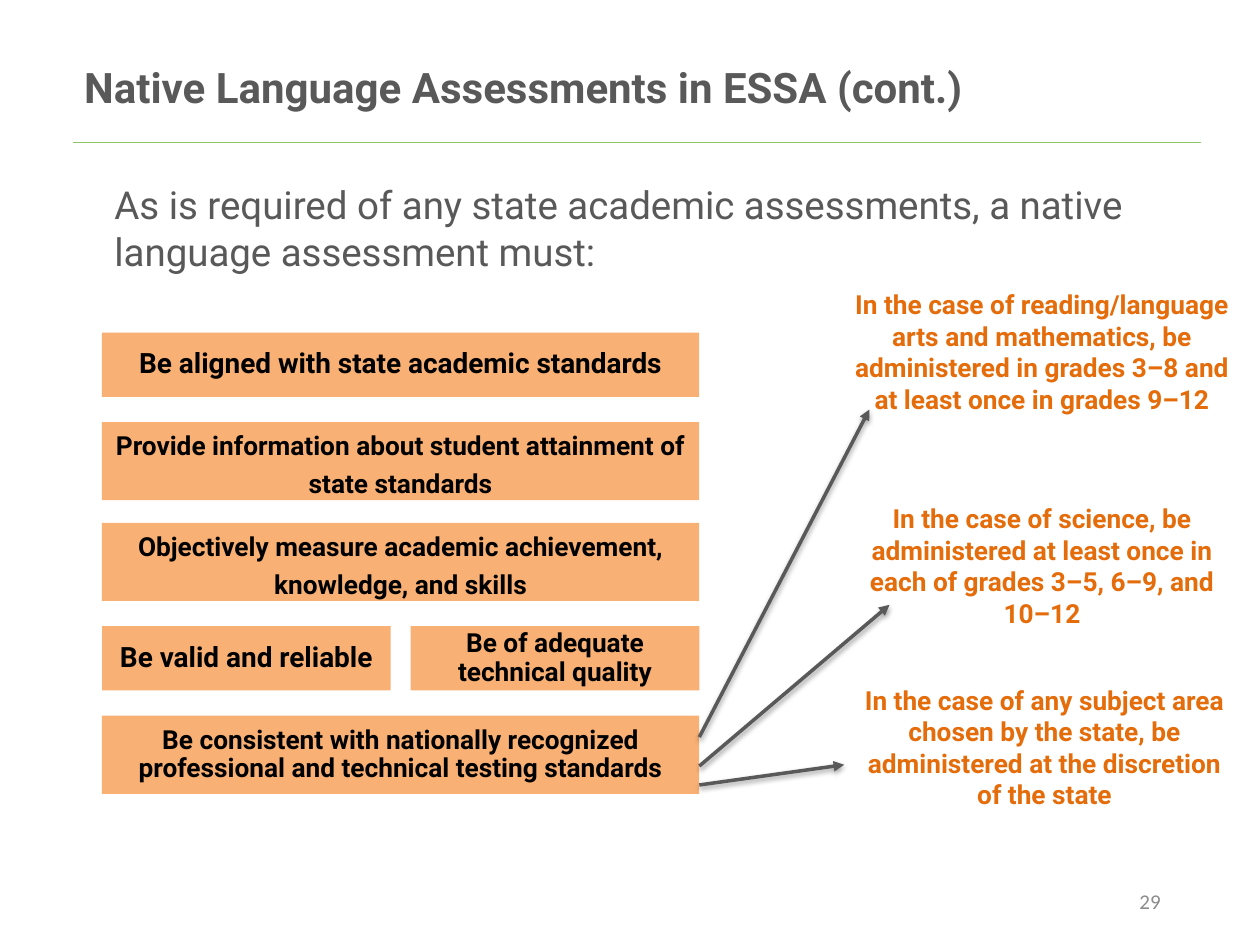
import pptx
import pptx.util
import pptx.dml.color
import pptx.enum.shapes
import pptx.enum.text
import pptx.oxml
import pptx.oxml.ns
from dataclasses import dataclass

Inches = pptx.util.Inches
Pt = pptx.util.Pt
Align = pptx.enum.text.PP_ALIGN
Anchor = pptx.enum.text.MSO_ANCHOR


@dataclass(frozen=True)
class Theme:
    font: str = "Roboto"
    plain: str = "Calibri"
    gray: str = "595959"
    pale: str = "8C8C8C"
    green: str = "90C56A"
    peach: str = "F9B074"
    orange: str = "E46C0A"
    black: str = "000000"
    title: int = 24
    lead: int = 22
    large: int = 16
    body: int = 15
    small: int = 12


THEME = Theme()


def rgb(code):
    return pptx.dml.color.RGBColor.from_string(code)


def write(shape, text, size, color, bold=False, align=Align.LEFT,
          anchor=Anchor.TOP, font=THEME.font, inset=None, space=None, after=None):
    frame = shape.text_frame
    frame.word_wrap = True
    frame.vertical_anchor = anchor
    if inset is not None:
        frame.margin_left = frame.margin_right = Inches(inset)
        frame.margin_top = frame.margin_bottom = Inches(inset)
    para = frame.paragraphs[0]
    para.alignment = align
    para.line_spacing = space
    para.space_after = after
    run = para.add_run()
    run.text = text
    run.font.name = font
    run.font.size = Pt(size)
    run.font.bold = bold
    run.font.color.rgb = rgb(color)


def label(slide, box, text, size, color, **form):
    shape = slide.shapes.add_textbox(*map(Inches, box))
    write(shape, text, size, color, **form)


def line(slide, start, end, color, width):
    kind = pptx.enum.shapes.MSO_CONNECTOR.STRAIGHT
    item = slide.shapes.add_connector(kind, *map(Inches, start + end))
    item.line.color.rgb = rgb(color)
    item.line.width = Pt(width)
    effect = pptx.oxml.parse_xml(
        "<a:effectLst %s/>" % pptx.oxml.ns.nsdecls("a"))
    item._element.spPr.append(effect)
    return item, effect


def arrow(slide, start, end):
    item, effect = line(slide, start, end, THEME.gray, 2)
    space = pptx.oxml.ns.nsdecls("a")
    item.line._get_or_add_ln().append(
        pptx.oxml.parse_xml('<a:tailEnd %s type="triangle"/>' % space))
    effect.append(pptx.oxml.parse_xml(
        '<a:outerShdw %s blurRad="40000" dist="20000" dir="5400000" rotWithShape="0">'
        '<a:srgbClr val="000000"><a:alpha val="38000"/></a:srgbClr>'
        '</a:outerShdw>' % space))


def header(slide, box):
    left, top, width, height = box
    label(slide, box, "Native Language Assessments in ESSA (cont.)",
          THEME.title, THEME.gray, bold=True, anchor=Anchor.MIDDLE)
    base = top + height + 0.08
    line(slide, (0.58, base), (9.53, base), THEME.green, 1)


def block(slide, box, text, size, space, after):
    kind = pptx.enum.shapes.MSO_SHAPE.RECTANGLE
    shape = slide.shapes.add_shape(kind, *map(Inches, box))
    shape.shadow.inherit = False
    shape.fill.solid()
    shape.fill.fore_color.rgb = rgb(THEME.peach)
    shape.line.fill.background()
    write(shape, text, size, THEME.black, bold=True, align=Align.CENTER,
          anchor=Anchor.MIDDLE, inset=0.07, space=space, after=after)


def needs(slide, box):
    left, top, width, height = box
    gap = 0.16
    large, body = THEME.large, THEME.body
    rows = [
        (0, 0.51, 0.9, None, [("Be aligned with state academic standards", large)]),
        (0.71, 0.62, 1.2, Pt(6), [
            ("Provide information about student attainment of state standards", body)]),
        (1.51, 0.62, 1.2, Pt(6), [
            ("Objectively measure academic achievement, knowledge, and skills", body)]),
        (2.33, 0.51, 0.9, None, [("Be valid and reliable", large),
                                 ("Be of adequate technical quality", body)]),
        (3.04, 0.62, 0.9, None, [
            ("Be consistent with nationally recognized professional and "
             "technical testing standards", body)]),
    ]
    for drop, tall, space, after, cells in rows:
        wide = (width - gap * (len(cells) - 1)) / len(cells)
        for i, (text, size) in enumerate(cells):
            spot = (left + i * (wide + gap), top + drop, wide, tall)
            block(slide, spot, text, size, space, after)


def cases(slide, box):
    left, top, width, height = box
    items = [
        (0, 0, 1.36, "In the case of reading/language arts and mathematics, be "
         "administered in grades 3–8 and at least once in grades 9–12"),
        (0, 1.7, 1.11, "In the case of science, be administered at least once in "
         "each of grades 3–5, 6–9, and 10–12"),
        (0.02, 3.14, 1.11, "In the case of any subject area chosen by the state, be "
         "administered at the discretion of the state"),
    ]
    for shift, drop, tall, text in items:
        label(slide, (left + shift, top + drop, width, tall), text,
              THEME.body, THEME.orange, bold=True, align=Align.CENTER)


def links(slide, box):
    left, top, width, height = box
    for start, end in [(2.6, (1.35, 0)), (2.83, (1.51, 1.55)), (2.98, (1.15, 2.82))]:
        arrow(slide, (left, top + start), (left + end[0], top + end[1]))


def main():
    deck = pptx.Presentation()
    deck.slide_width, deck.slide_height = Inches(10), Inches(7.5)
    slide = deck.slides.add_slide(deck.slide_layouts[6])
    header(slide, (0.57, 0.33, 9.32, 0.72))
    label(slide, (0.81, 1.39, 8.53, 1.19),
          "As is required of any state academic assessments, a native "
          "language assessment must:", THEME.lead, THEME.gray)
    needs(slide, (0.81, 2.64, 4.74, 3.66))
    links(slide, (5.55, 3.25, 1.51, 2.98))
    cases(slide, (6.67, 2.24, 3.2, 4.25))
    label(slide, (7.06, 6.95, 2.25, 0.4), "29", THEME.small, THEME.pale,
          align=Align.RIGHT, anchor=Anchor.MIDDLE, font=THEME.plain)
    deck.save("out.pptx")


if __name__ == "__main__":
    main()
